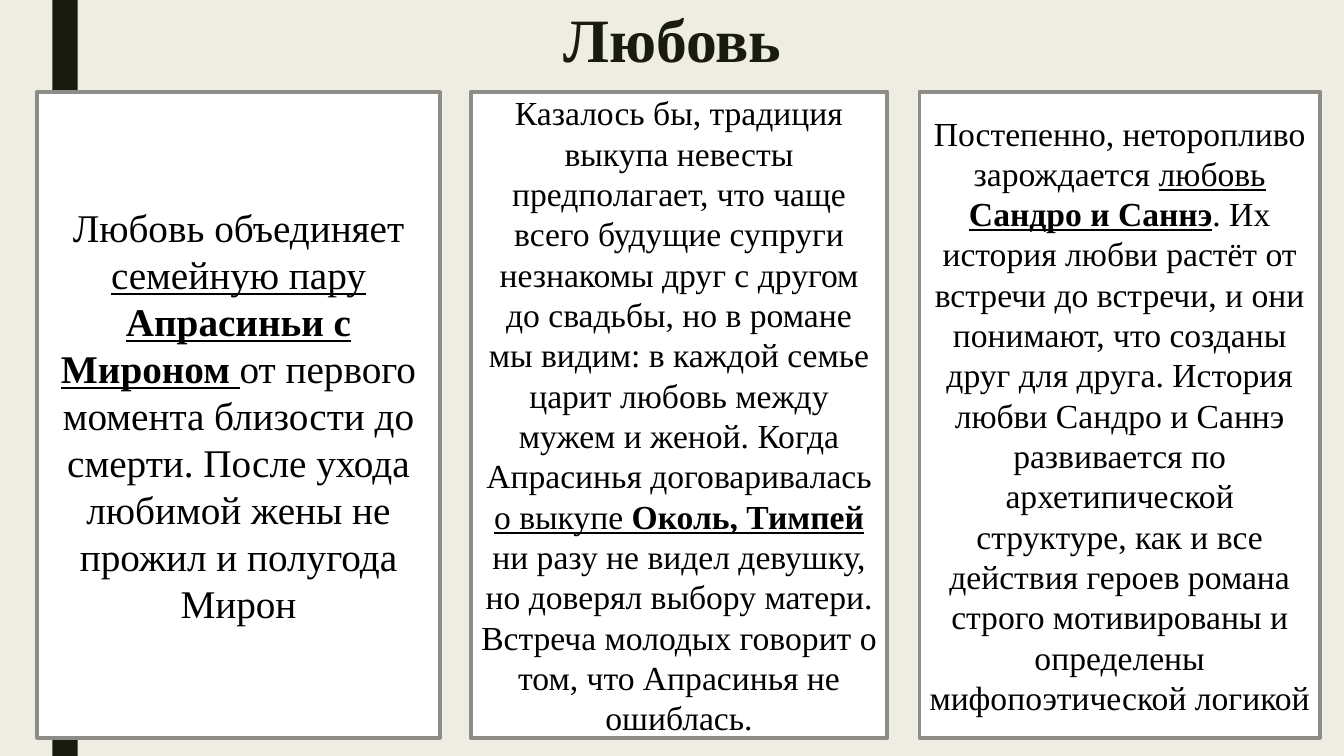
"""Build a slide about love with a title and three text cards."""
import pptx
import pptx.dml.color
import pptx.enum.shapes
import pptx.enum.text
import pptx.util
from pptx.util import Inches

COLORS = {"background": "EFEDE3", "dark": "191B0E", "card": "FFFFFF", "border": "8C8D86", "text": "000000"}
PLAIN = {"bold": False, "underline": False}
UNDERLINED = {"bold": False, "underline": True}
STRONG = {"bold": True, "underline": True}
CARD_TOP, CARD_HEIGHT = 0.91, 6.41

cards = [
    (0.37, 3.99, 28, [
        ("Любовь объединяет ", PLAIN),
        ("семейную пару ", UNDERLINED),
        ("Апрасиньи с Мироном ", STRONG),
        ("от первого момента близости до смерти. После ухода любимой жены не прожил "
         "и полугода Мирон", PLAIN),
    ]),
    (4.67, 4.13, 24, [
        ("Казалось бы, традиция выкупа невесты предполагает, что чаще всего будущие супруги "
         "незнакомы друг с другом до свадьбы, но в романе мы видим: в каждой семье царит любовь "
         "между мужем и женой. Когда Апрасинья договаривалась ", PLAIN),
        ("о выкупе ", UNDERLINED),
        ("Околь, Тимпей ", STRONG),
        ("ни разу не видел девушку, но доверял выбору матери. Встреча молодых говорит о том, "
         "что Апрасинья не ошиблась.", PLAIN),
    ]),
    (9.12, 3.97, 24, [
        ("Постепенно, неторопливо зарождается ", PLAIN),
        ("любовь ", UNDERLINED),
        ("Сандро и Саннэ", STRONG),
        (". Их история любви растёт от встречи до встречи, и они понимают, что созданы друг для "
         "друга. История любви Сандро и Саннэ развивается по архетипической структуре, как и все "
         "действия героев романа строго мотивированы и определены мифопоэтической логикой", PLAIN),
    ]),
]


def color(name):
    return pptx.dml.color.RGBColor.from_string(COLORS[name])


def add_run(paragraph, text, size, color_name, style):
    run = paragraph.add_run()
    run.text = text
    run.font.color.rgb = color(color_name)
    font_format = {"name": "Times New Roman", "size": pptx.util.Pt(size), **style}
    for attribute, value in font_format.items():
        setattr(run.font, attribute, value)


presentation = pptx.Presentation()
presentation.slide_width = Inches(13.33)
presentation.slide_height = Inches(7.5)
slide = presentation.slides.add_slide(presentation.slide_layouts[5])
slide.background.fill.solid()
slide.background.fill.fore_color.rgb = color("background")

title = slide.shapes.title
title_format = {"left": Inches(0.92), "top": Inches(0), "width": Inches(11.5), "height": Inches(0.85)}
for attribute, value in title_format.items():
    setattr(title, attribute, value)
title.text_frame.vertical_anchor = pptx.enum.text.MSO_ANCHOR.MIDDLE
title_paragraph = title.text_frame.paragraphs[0]
title_paragraph.alignment = pptx.enum.text.PP_ALIGN.CENTER
title_paragraph.line_spacing = 0.89
add_run(title_paragraph, "Любовь", 44, "dark", {"bold": True})

rectangle = pptx.enum.shapes.MSO_SHAPE.RECTANGLE
stripe = slide.shapes.add_shape(rectangle, Inches(0.52), Inches(0), Inches(0.25), Inches(7.5))
stripe.shadow.inherit = False
stripe.fill.solid()
stripe.fill.fore_color.rgb = color("dark")
stripe.line.fill.background()

for left, width, size, runs in cards:
    card = slide.shapes.add_shape(
        rectangle, Inches(left), Inches(CARD_TOP), Inches(width), Inches(CARD_HEIGHT))
    card.shadow.inherit = False
    card.fill.solid()
    card.fill.fore_color.rgb = color("card")
    card.line.color.rgb = color("border")
    card.line.width = pptx.util.Pt(2.75)
    card.text_frame.word_wrap = True
    card.text_frame.vertical_anchor = pptx.enum.text.MSO_ANCHOR.MIDDLE
    paragraph = card.text_frame.paragraphs[0]
    paragraph.alignment = pptx.enum.text.PP_ALIGN.CENTER
    for text, style in runs:
        add_run(paragraph, text, size, "text", style)

presentation.save("out.pptx")
